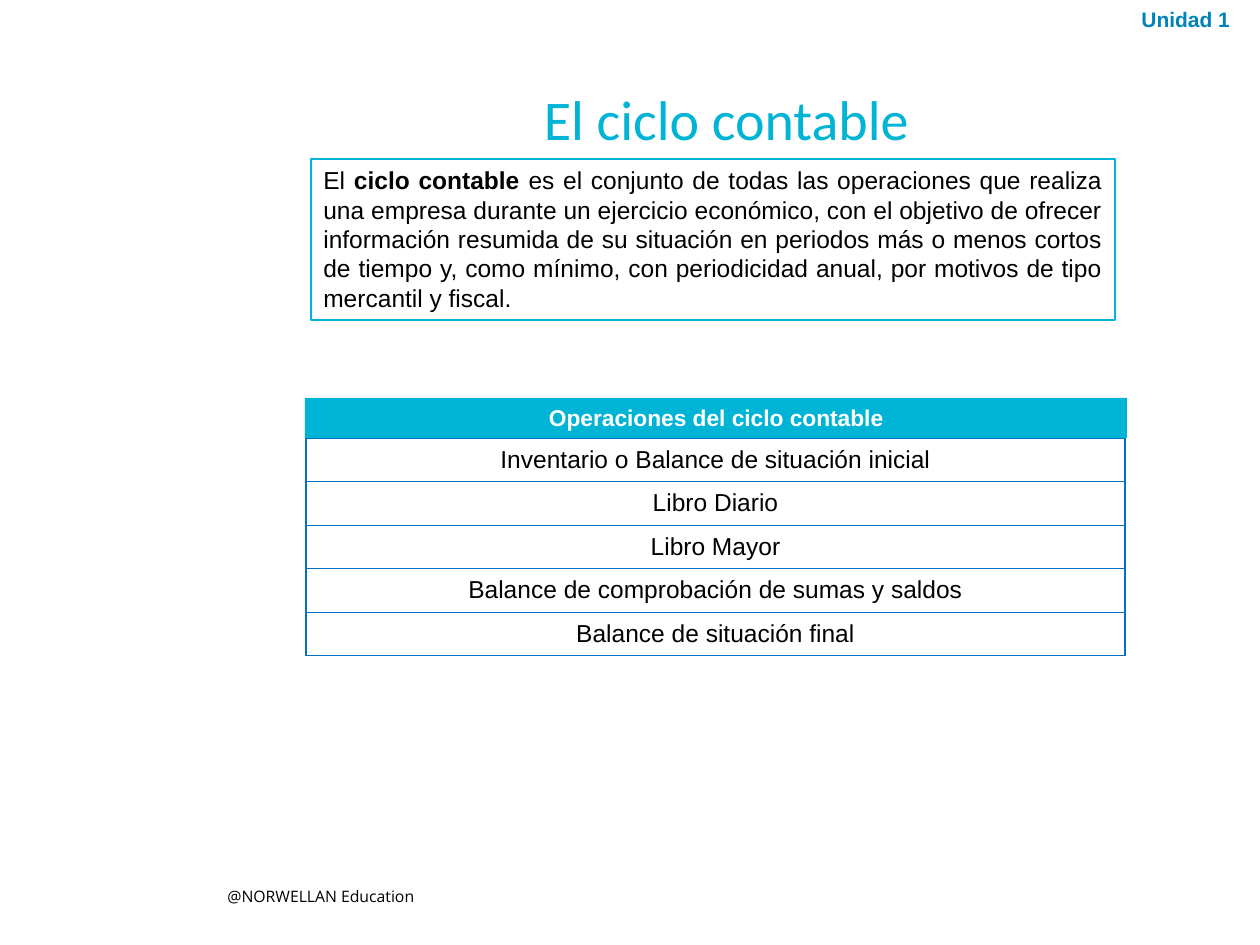
"""Build the slide on the accounting cycle and its operations."""
from lxml.etree import SubElement
from pptx import Presentation
from pptx.dml.color import RGBColor
from pptx.enum.shapes import MSO_SHAPE
from pptx.enum.text import MSO_ANCHOR, PP_ALIGN
from pptx.oxml.ns import qn
from pptx.util import Emu, Pt

COLORS = {"cyan": "00B4D5", "blue": "0083BB", "border": "0070C0", "black": "000000", "white": "FFFFFF"}

CREDIT = "@NORWELLAN Education"
UNIT = "Unidad 1"
TITLE = "El ciclo contable"
DEFINITION = [
    ("El ", False),
    ("ciclo contable ", True),
    ("es el conjunto de todas las operaciones que realiza una empresa durante un ejercicio "
     "económico, con el objetivo de ofrecer información resumida de su situación en periodos "
     "más o menos cortos de tiempo y, como mínimo, con periodicidad anual, por motivos de tipo "
     "mercantil y fiscal.", False),
]
HEADING = "Operaciones del ciclo contable"
OPERATIONS = [
    "Inventario o Balance de situación inicial",
    "Libro Diario",
    "Libro Mayor",
    "Balance de comprobación de sumas y saldos",
    "Balance de situación final",
]


def px(value):
    return Emu(round(value * 914400 / 126))


def color(name):
    return RGBColor.from_string(COLORS[name])


def write(frame, runs, size, ink, font="Arial", bold=None, align=PP_ALIGN.LEFT):
    frame.word_wrap = True
    paragraph = frame.paragraphs[0]
    paragraph.alignment = align
    paragraph.font.name = font
    paragraph.font.size = Pt(size)
    paragraph.font.bold = bold
    paragraph.font.color.rgb = color(ink)
    for text, run_bold in runs:
        run = paragraph.add_run()
        run.text = text
        if run_bold:
            run.font.bold = True
    return paragraph


def add_label(slide, box, text, size, ink, **style):
    shape = slide.shapes.add_textbox(*map(px, box))
    return write(shape.text_frame, [(text, None)], size, ink, **style)


def add_box(slide, box, fill, line=None):
    shape = slide.shapes.add_shape(MSO_SHAPE.RECTANGLE, *map(px, box))
    shape.shadow.inherit = False
    shape.fill.solid()
    shape.fill.fore_color.rgb = color(fill)
    if line:
        shape.line.color.rgb = color(line)
        shape.line.width = Pt(0.75)
    else:
        shape.line.fill.background()
    shape.text_frame.vertical_anchor = MSO_ANCHOR.TOP
    return shape.text_frame


def set_borders(cell, name):
    properties = cell._tc.get_or_add_tcPr()
    for position, side in enumerate(("lnL", "lnR", "lnT", "lnB")):
        border = properties.makeelement(qn(f"a:{side}"), {"w": str(Pt(0.75))})
        fill = SubElement(border, qn("a:solidFill"))
        SubElement(fill, qn("a:srgbClr"), val=COLORS[name])
        properties.insert(position, border)


def add_operations(slide, box):
    table = slide.shapes.add_table(len(OPERATIONS), 1, *map(px, box)).table
    table.first_row = table.horz_banding = False
    for row, operation in zip(table.rows, OPERATIONS):
        row.height = px(box[3] / len(OPERATIONS))
        cell = row.cells[0]
        cell.fill.background()
        cell.vertical_anchor = MSO_ANCHOR.MIDDLE
        set_borders(cell, "border")
        write(cell.text_frame, [(operation, None)], 14, "black", align=PP_ALIGN.CENTER)


def main():
    presentation = Presentation()
    presentation.slide_width, presentation.slide_height = px(1260), px(945)
    slide = presentation.slides.add_slide(presentation.slide_layouts[6])

    add_label(slide, (215, 881, 242, 32), CREDIT, 9, "black", font="Open Sans")
    add_label(slide, (1129, 0, 131, 38), UNIT, 12, "blue", bold=True)
    title = add_label(slide, (193, 86, 1067, 68), TITLE, 32, "cyan",
                      font="Calibri", align=PP_ALIGN.CENTER)
    title.line_spacing = 0.9

    definition = add_box(slide, (311, 159, 804, 161), "white", "cyan")
    write(definition, DEFINITION, 14, "black", align=PP_ALIGN.JUSTIFY)

    add_operations(slide, (306, 438, 819, 218))
    heading = add_box(slide, (305, 398, 822, 40), "cyan")
    write(heading, [(HEADING, None)], 13, "white", bold=True, align=PP_ALIGN.CENTER)

    presentation.save("out.pptx")


if __name__ == "__main__":
    main()
